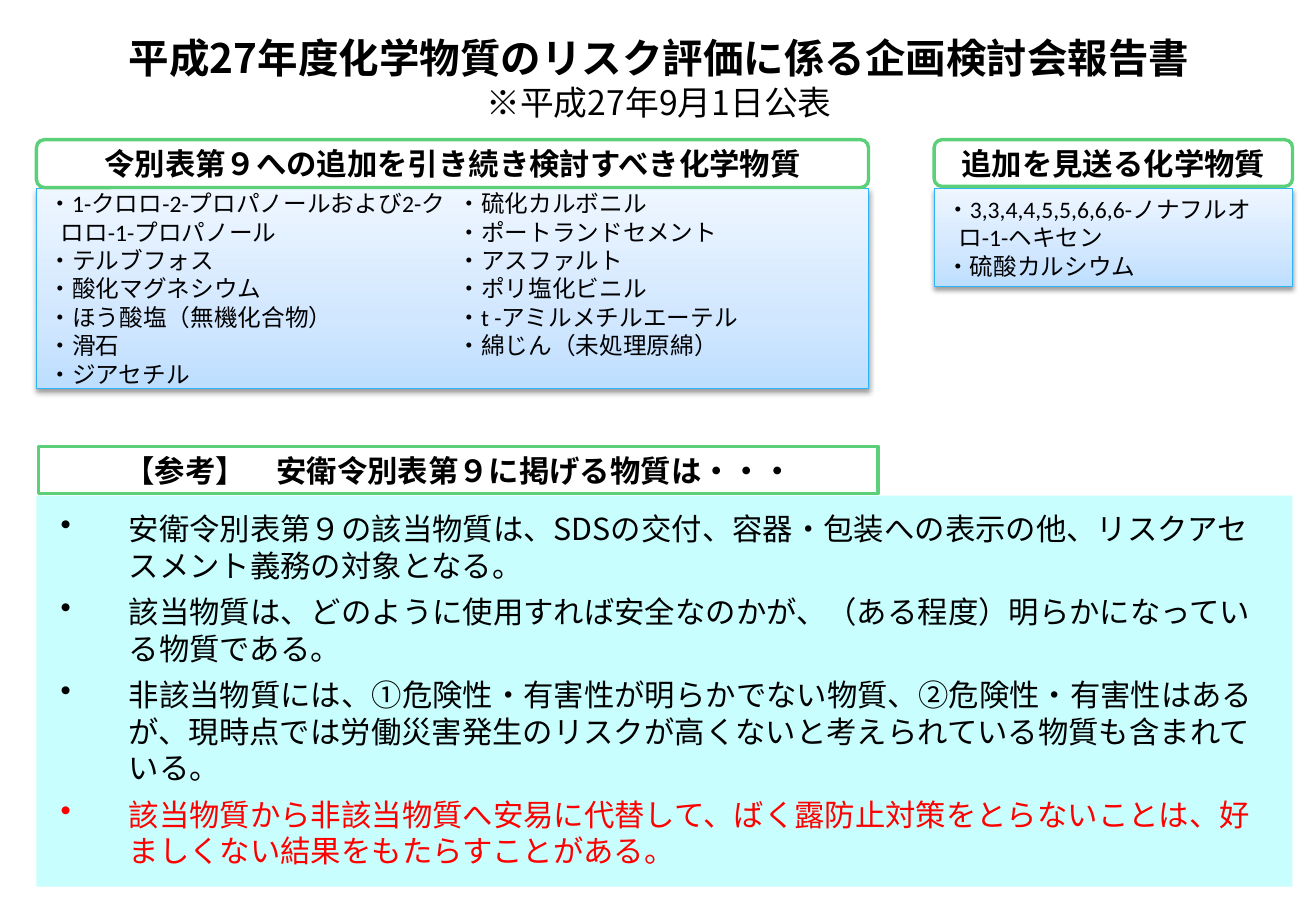
from lxml import etree
from pptx import Presentation
from pptx.dml.color import RGBColor
from pptx.enum.shapes import MSO_SHAPE as SHAPE
from pptx.enum.text import MSO_ANCHOR as ANCHOR, PP_ALIGN as ALIGN
from pptx.oxml import parse_xml
from pptx.oxml.ns import nsdecls, qn
from pptx.util import Pt

BLACK = RGBColor(0x00, 0x00, 0x00)
WHITE = RGBColor(0xFF, 0xFF, 0xFF)
RED = RGBColor(0xFF, 0x00, 0x00)
GREEN = RGBColor(0x5B, 0xD0, 0x78)
BLUE = RGBColor(0x2B, 0xB4, 0xFC)
AQUA = RGBColor(0xC8, 0xFE, 0xFD)
GOTHIC = "Noto Sans CJK JP"

GRADIENT = f"""<a:gradFill {nsdecls('a')} rotWithShape="1"><a:gsLst>
<a:gs pos="0"><a:srgbClr val="BDDEFF"/></a:gs>
<a:gs pos="35000"><a:srgbClr val="D1E7FF"/></a:gs>
<a:gs pos="100000"><a:srgbClr val="EEF6FF"/></a:gs>
</a:gsLst><a:lin ang="16200000" scaled="0"/></a:gradFill>"""
SHADOW = f"""<a:effectLst {nsdecls('a')}>
<a:outerShdw blurRad="{Pt(3.1)}" dist="{Pt(1.6)}" dir="5400000" rotWithShape="0">
<a:srgbClr val="000000"><a:alpha val="38000"/></a:srgbClr></a:outerShdw></a:effectLst>"""


def add_box(kind, bounds, fill, line, width):
    box = slide.shapes.add_shape(kind, *map(Pt, bounds))
    box.shadow.inherit = False
    box.fill.solid()
    box.fill.fore_color.rgb = fill
    if line is None:
        box.line.fill.background()
    else:
        box.line.color.rgb = line
        box.line.width = Pt(width)
    box.text_frame.word_wrap = True
    box.text_frame.vertical_anchor = ANCHOR.MIDDLE
    return box


def style(para, name, size, color=BLACK, bold=False, align=ALIGN.LEFT):
    para.alignment = align
    font = para.font
    font.name, font.size, font.bold = name, Pt(size), bold
    font.color.rgb = color
    latin = para._p.pPr.find(qn("a:defRPr")).find(qn("a:latin"))
    east_asian = etree.Element(qn("a:ea"), typeface=name)
    latin.addnext(east_asian)


deck = Presentation()
deck.slide_width, deck.slide_height = Pt(780), Pt(540)
slide = deck.slides.add_slide(deck.slide_layouts[6])

duties = [
    ("安衛令別表第９の該当物質は、SDSの交付、容器・包装への表示の他、リスクアセスメント義務の対象となる。", BLACK),
    ("該当物質は、どのように使用すれば安全なのかが、（ある程度）明らかになっている物質である。", BLACK),
    ("非該当物質には、①危険性・有害性が明らかでない物質、②危険性・有害性はあるが、現時点では労働災害発生のリスクが高くないと考えられている物質も含まれている。", BLACK),
    ("該当物質から非該当物質へ安易に代替して、ばく露防止対策をとらないことは、好ましくない結果をもたらすことがある。", RED),
]
duty_box = add_box(SHAPE.RECTANGLE, (21.6, 293.8, 744.5, 231.8), AQUA, None, 0)
frame = duty_box.text_frame
frame.vertical_anchor = ANCHOR.TOP
frame.margin_left = frame.margin_right = Pt(14.4)
frame.margin_top = frame.margin_bottom = Pt(8.64)
for index, (text, color) in enumerate(duties):
    para = frame.add_paragraph() if index else frame.paragraphs[0]
    para.text = text
    style(para, GOTHIC, 18, color)
    para.space_before = Pt(6)
    properties = para._p.pPr
    properties.set("marL", str(Pt(40.3)))
    properties.set("indent", str(Pt(-40.3)))
    bullet = etree.Element(qn("a:buChar"), char="•")
    properties.find(qn("a:defRPr")).addprevious(bullet)

continued = [
    "・1-クロロ-2-プロパノールおよび2-クロロ-1-プロパノール",
    "・テルブフォス",
    "・酸化マグネシウム",
    "・ほう酸塩（無機化合物）",
    "・滑石",
    "・ジアセチル",
    "・硫化カルボニル",
    "・ポートランドセメント",
    "・アスファルト",
    "・ポリ塩化ビニル",
    "・t -アミルメチルエーテル",
    "・綿じん（未処理原綿）",
]
postponed = ["・3,3,4,4,5,5,6,6,6-ノナフルオロ-1-ヘキセン", "・硫酸カルシウム"]
for bounds, substances, columns in [
    ((21.6, 111.6, 493.2, 118.8), continued, 2),
    ((553.7, 111.6, 212.4, 58.3), postponed, 1),
]:
    box = add_box(SHAPE.RECTANGLE, bounds, WHITE, BLUE, 0.75)
    look = box._element.spPr
    look.replace(look.find(qn("a:solidFill")), parse_xml(GRADIENT))
    look.replace(look.find(qn("a:effectLst")), parse_xml(SHADOW))
    frame = box.text_frame
    if columns > 1:
        body = frame._txBody.bodyPr
        body.set("numCol", str(columns))
        body.set("spcCol", str(Pt(5.8)))
    for index, substance in enumerate(substances):
        para = frame.add_paragraph() if index else frame.paragraphs[0]
        para.text = substance
        style(para, "Calibri", 14)
    hanging = frame.paragraphs[0]._p.pPr
    hanging.set("marL", str(Pt(7.2)))
    hanging.set("indent", str(Pt(-7.2)))

for kind, bounds, heading in [
    (SHAPE.ROUNDED_RECTANGLE, (21.6, 82.8, 493.2, 28.4), "令別表第９への追加を引き続き検討すべき化学物質"),
    (SHAPE.ROUNDED_RECTANGLE, (553.7, 82.8, 212.4, 27.7), "追加を見送る化学物質"),
    (SHAPE.RECTANGLE, (23, 264.5, 497.5, 28.1), "【参考】\u3000安衛令別表第９に掲げる物質は・・・".replace("\u3000", "　")),
]:
    box = add_box(kind, bounds, WHITE, GREEN, 2)
    para = box.text_frame.paragraphs[0]
    para.text = heading
    style(para, GOTHIC, 18, bold=True, align=ALIGN.CENTER)

title = slide.shapes.add_textbox(Pt(39.6), Pt(9.4), Pt(702), Pt(73.4))
title.text_frame.word_wrap = True
title.text_frame.vertical_anchor = ANCHOR.MIDDLE
para = title.text_frame.paragraphs[0]
style(para, GOTHIC, 24, bold=True, align=ALIGN.CENTER)
para.add_run().text = "平成27年度化学物質のリスク評価に係る企画検討会報告書"
para.add_line_break()
span = para.add_run()
span.text = "※平成27年9月1日公表"
span.font.size, span.font.bold = Pt(20), False

deck.save("out.pptx")
